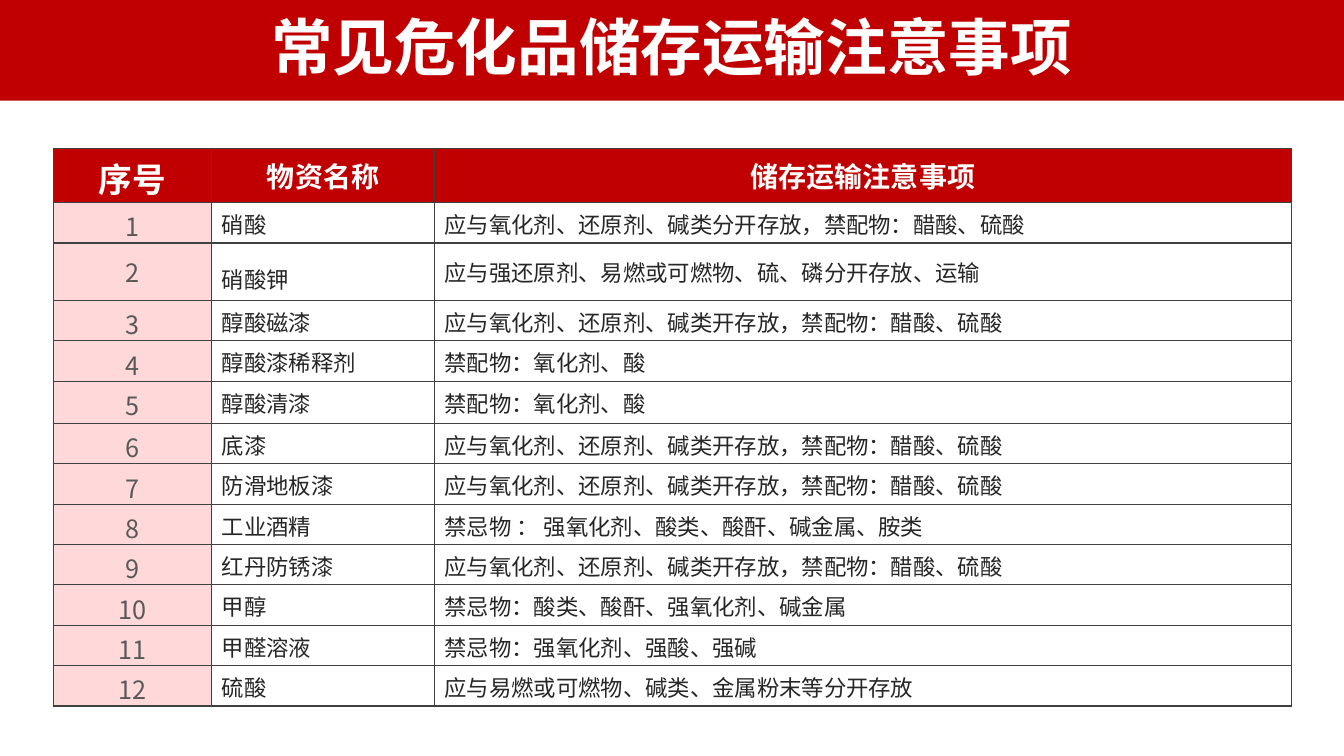
from lxml.etree import SubElement
from pptx import Presentation
from pptx.dml.color import RGBColor
from pptx.enum.shapes import MSO_SHAPE
from pptx.enum.text import MSO_ANCHOR, PP_ALIGN
from pptx.oxml.ns import qn
from pptx.util import Inches, Pt

TITLE = "常见危化品储存运输注意事项"
HEADERS = [("序号", 24), ("物资名称", 20), ("储存运输注意事项", 20)]
PAINT_NOTE = "应与氧化剂、还原剂、碱类开存放，禁配物：醋酸、硫酸"
MATERIALS = [
    ("硝酸", "应与氧化剂、还原剂、碱类分开存放，禁配物：醋酸、硫酸"),
    ("硝酸钾", "应与强还原剂、易燃或可燃物、硫、磷分开存放、运输"),
    ("醇酸磁漆", PAINT_NOTE),
    ("醇酸漆稀释剂", "禁配物：氧化剂、酸"),
    ("醇酸清漆", "禁配物：氧化剂、酸"),
    ("底漆", PAINT_NOTE),
    ("防滑地板漆", PAINT_NOTE),
    ("工业酒精", "禁忌物 ： 强氧化剂、酸类、酸酐、碱金属、胺类"),
    ("红丹防锈漆", PAINT_NOTE),
    ("甲醇", "禁忌物：酸类、酸酐、强氧化剂、碱金属"),
    ("甲醛溶液", "禁忌物：强氧化剂、强酸、强碱"),
    ("硫酸", "应与易燃或可燃物、碱类、金属粉末等分开存放"),
]
BOTTOM_ANCHORED = ("硝酸", "硝酸钾")
FONT = "Noto Sans CJK SC"
RED, PINK, WHITE = "C00000", "FFD9D9", "FFFFFF"
GREY, DARK, BORDER = "595959", "262626", "404040"
COLUMN_WIDTHS = [1.57, 2.21, 8.5]
ROW_HEIGHT = 0.4
SPECIAL_HEIGHTS = {0: 0.54, 2: 0.57, 5: 0.42}


def set_fill(target, color):
    target.fill.solid()
    target.fill.fore_color.rgb = RGBColor.from_string(color)


def write_text(frame, text, size, color, bold=False, align=PP_ALIGN.LEFT):
    paragraph = frame.paragraphs[0]
    paragraph.alignment = align
    run = paragraph.add_run()
    run.text = text
    font = run.font
    font.name, font.size, font.bold = FONT, Pt(size), bold
    font.color.rgb = RGBColor.from_string(color)
    properties = run._r.get_or_add_rPr()
    SubElement(properties, qn("a:ea")).set("typeface", FONT)
    return paragraph


def set_borders(cell):
    properties = cell._tc.get_or_add_tcPr()
    for position, side in enumerate(("lnL", "lnR", "lnT", "lnB")):
        line = SubElement(properties, qn(f"a:{side}"), w=str(Pt(1)))
        properties.insert(position, line)
        fill = SubElement(line, qn("a:solidFill"))
        SubElement(fill, qn("a:srgbClr"), val=BORDER)


def fill_cell(cell, text, size, color, fill, anchor=MSO_ANCHOR.MIDDLE, **text_format):
    write_text(cell.text_frame, text, size, color, **text_format)
    cell.vertical_anchor = anchor
    set_fill(cell, fill)
    set_borders(cell)


def add_banner(slide):
    banner = slide.shapes.add_shape(MSO_SHAPE.RECTANGLE, 0, 0, Inches(13.33), Inches(1))
    banner.shadow.inherit = False
    set_fill(banner, RED)
    banner.line.fill.background()
    box = slide.shapes.add_textbox(0, Inches(0.12), Inches(13.33), Inches(0.77))
    frame = box.text_frame
    frame.word_wrap = True
    title = write_text(frame, TITLE, 44, WHITE, bold=True, align=PP_ALIGN.CENTER)
    title.line_spacing = 0.9
    frame.vertical_anchor = MSO_ANCHOR.MIDDLE


def add_materials_table(slide):
    heights = [SPECIAL_HEIGHTS.get(row, ROW_HEIGHT) for row in range(len(MATERIALS) + 1)]
    table = slide.shapes.add_table(
        len(heights), len(COLUMN_WIDTHS), Inches(0.53), Inches(1.47),
        Inches(sum(COLUMN_WIDTHS)), Inches(sum(heights)),
    ).table
    for column, width in zip(table.columns, COLUMN_WIDTHS):
        column.width = Inches(width)
    for row, height in zip(table.rows, heights):
        row.height = Inches(height)
    for column, (text, size) in enumerate(HEADERS):
        fill_cell(table.cell(0, column), text, size, WHITE, RED, bold=True, align=PP_ALIGN.CENTER)
    for row, (name, note) in enumerate(MATERIALS, 1):
        anchor = MSO_ANCHOR.BOTTOM if name in BOTTOM_ANCHORED else MSO_ANCHOR.MIDDLE
        fill_cell(table.cell(row, 0), str(row), 18, GREY, PINK, align=PP_ALIGN.CENTER)
        fill_cell(table.cell(row, 1), name, 16, DARK, WHITE, anchor=anchor)
        fill_cell(table.cell(row, 2), note, 16, DARK, WHITE)


def main():
    presentation = Presentation()
    presentation.slide_width, presentation.slide_height = Inches(13.33), Inches(7.5)
    slide = presentation.slides.add_slide(presentation.slide_layouts[6])
    add_banner(slide)
    add_materials_table(slide)
    presentation.save("out.pptx")


if __name__ == "__main__":
    main()
